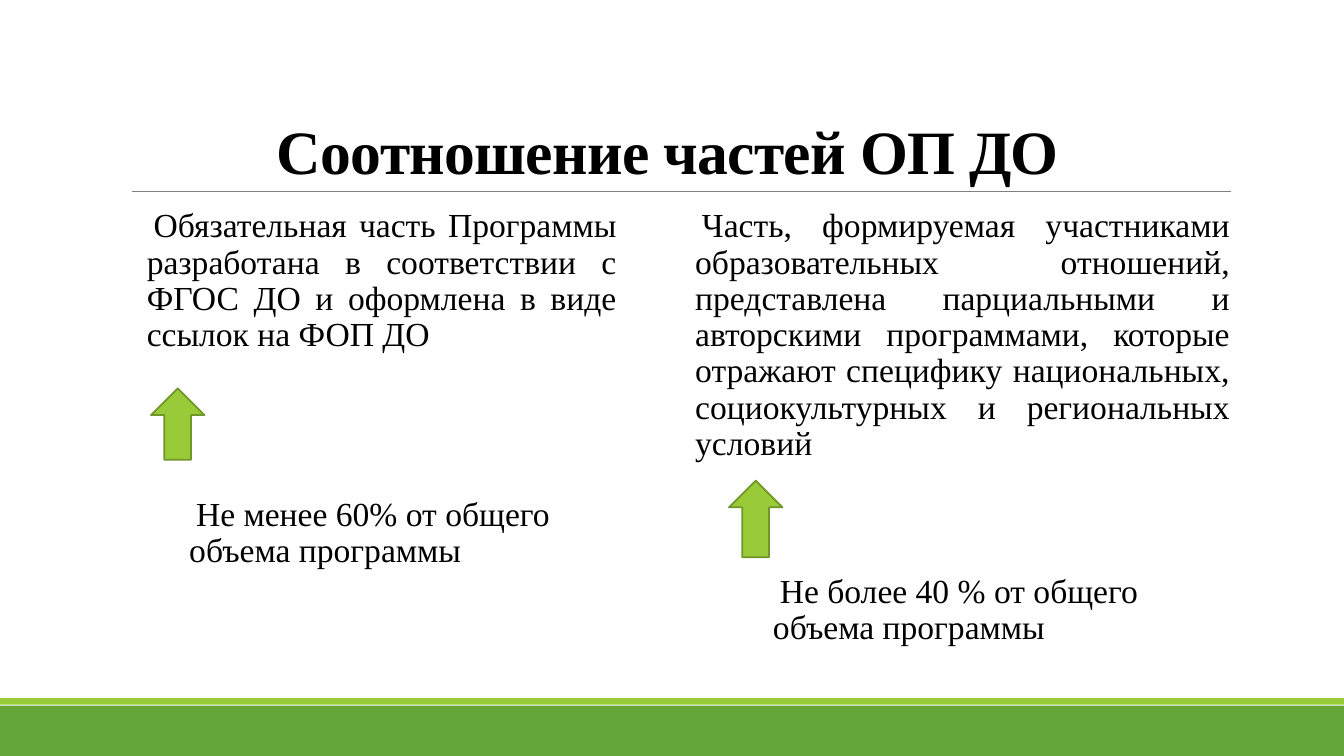
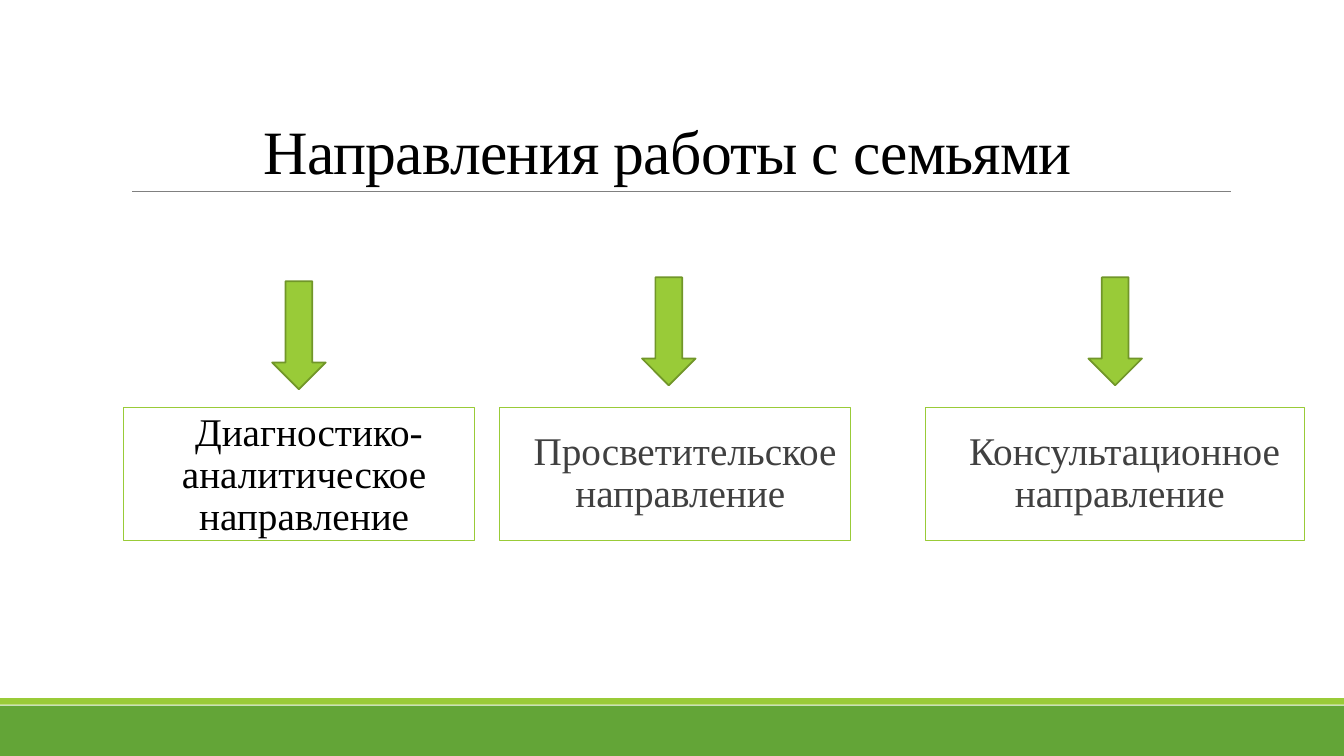
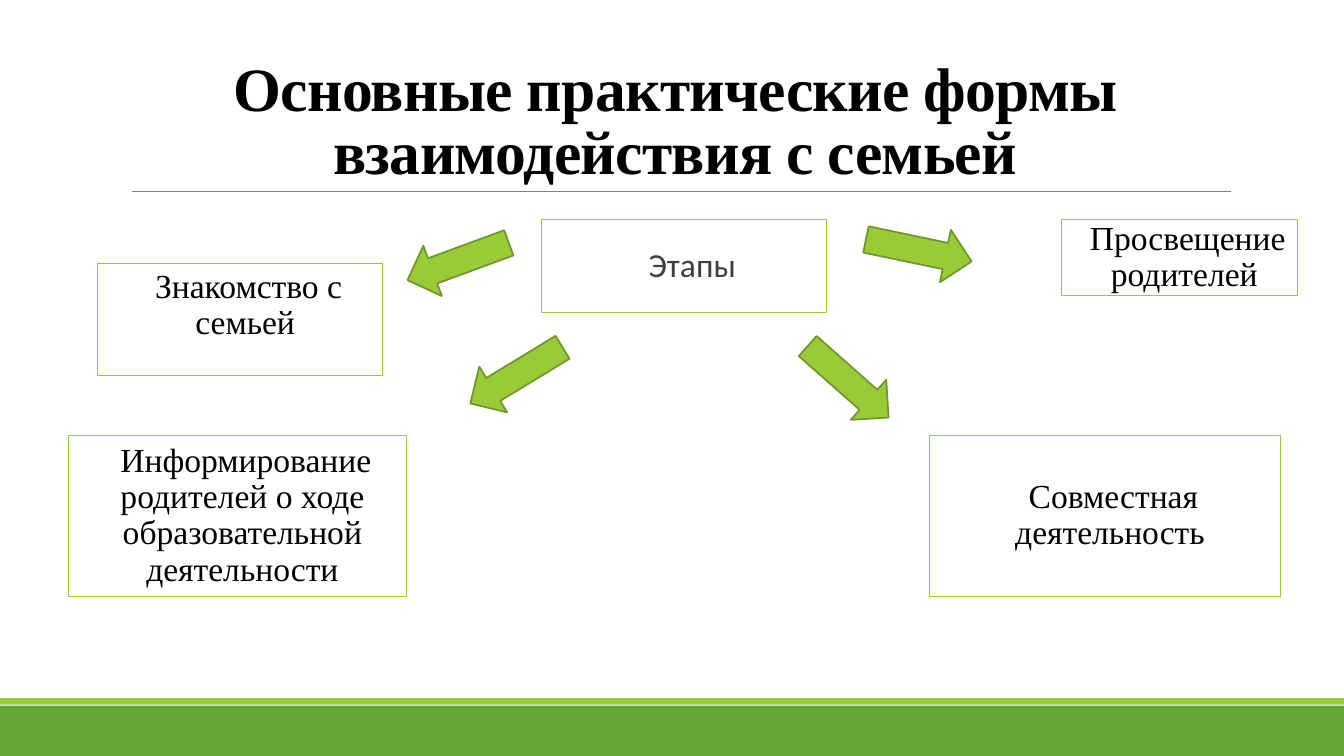
from dataclasses import dataclass

from lxml import etree
from pptx import Presentation
from pptx.dml.color import RGBColor
from pptx.enum.shapes import MSO_CONNECTOR, MSO_SHAPE
from pptx.enum.text import MSO_ANCHOR, PP_ALIGN
from pptx.oxml.ns import qn
from pptx.util import Cm, Pt

RECTANGLE = MSO_SHAPE.RECTANGLE
RIGHT_ARROW = MSO_SHAPE.RIGHT_ARROW
DOWN_ARROW = MSO_SHAPE.DOWN_ARROW
STRAIGHT = MSO_CONNECTOR.STRAIGHT
TOP, MIDDLE, BOTTOM = MSO_ANCHOR.TOP, MSO_ANCHOR.MIDDLE, MSO_ANCHOR.BOTTOM
LEFT, CENTER, JUSTIFY = PP_ALIGN.LEFT, PP_ALIGN.CENTER, PP_ALIGN.JUSTIFY


@dataclass(frozen=True)
class Theme:
    band: str = "63A537"
    accent: str = "99CB38"
    arrow_line: str = "719629"
    rule: str = "808080"
    text: str = "000000"
    soft_text: str = "404040"
    font: str = "Times New Roman"
    plain_font: str = "Calibri"
    title_size: int = 44
    label_size: int = 28
    body_size: int = 24


THEME = Theme()
PAGE_WIDTH, PAGE_HEIGHT = 33.87, 19.05
ARROW_WIDTH, ARROW_LENGTH = 1.35, 2.72


def rgb(value):
    return RGBColor.from_string(value)


def lengths(*values):
    return [Cm(value) for value in values]


def add_filled(page, kind, at, fill, line=None):
    shape = page.shapes.add_shape(kind, *lengths(*at))
    shape.shadow.inherit = False
    shape.fill.solid()
    shape.fill.fore_color.rgb = rgb(fill)
    if line:
        shape.line.color.rgb = rgb(line)
        shape.line.width = Pt(1.25)
    else:
        shape.line.fill.background()
    return shape


def add_arrow(page, left, top, rotation=0, kind=DOWN_ARROW,
              size=(ARROW_WIDTH, ARROW_LENGTH)):
    arrow = add_filled(page, kind, (left, top, *size), THEME.accent, THEME.arrow_line)
    arrow.rotation = rotation


def write(box, text, size, align, anchor, color=THEME.text, font=THEME.font):
    frame = box.text_frame
    frame.word_wrap = True
    frame.vertical_anchor = anchor
    para = frame.paragraphs[0]
    para.text = text
    para.alignment = align
    span = para.runs[0]
    span.font.size = Pt(size)
    span.font.name = font
    span.font.color.rgb = rgb(color)
    return para


def write_body(box, text, size, align, anchor, **style):
    """Write a paragraph with the hanging indent and blank bullet of body text."""
    frame = box.text_frame
    frame.margin_left = frame.margin_right = 0
    frame.margin_top = frame.margin_bottom = Cm(0.13)
    para = write(box, text, size, align, anchor, **style)
    para.line_spacing = 0.9
    para.space_before = Pt(12)
    para.space_after = Pt(2)
    properties = para._p.get_or_add_pPr()
    properties.set("marL", str(Cm(0.25)))
    properties.set("indent", str(-Cm(0.25)))
    bullet_color = etree.SubElement(properties, qn("a:buClr"))
    etree.SubElement(bullet_color, qn("a:srgbClr"), val=THEME.accent)
    etree.SubElement(properties, qn("a:buChar"), char=" ")


def add_text(page, at, text, align=LEFT):
    box = page.shapes.add_textbox(*lengths(*at))
    write_body(box, text, THEME.body_size, align, TOP)


def add_framed(page, at, text, size=THEME.body_size, anchor=MIDDLE, **style):
    box = page.shapes.add_shape(RECTANGLE, *lengths(*at))
    box.shadow.inherit = False
    box.fill.background()
    box.line.color.rgb = rgb(THEME.accent)
    box.line.width = Pt(0.75)
    write_body(box, text, size, CENTER, anchor, **style)


def add_page(deck, title, bold=True):
    """Add a page with the green bands, the title and the rule below it."""
    page = deck.slides.add_slide(deck.slide_layouts[6])
    add_filled(page, RECTANGLE, (0, 17.78, PAGE_WIDTH, 1.27), THEME.band)
    add_filled(page, RECTANGLE, (0, 17.59, PAGE_WIDTH, 0.17), THEME.accent)

    rule = page.shapes.add_connector(STRAIGHT, *lengths(3.33, 4.82, 31.01, 4.82))
    rule.line.color.rgb = rgb(THEME.rule)
    rule.line.width = Pt(0.5)
    etree.SubElement(rule._element.spPr, qn("a:effectLst"))

    box = page.shapes.add_textbox(*lengths(3.05, 0.79, 27.94, 4.04))
    para = write(box, title, THEME.title_size, CENTER, BOTTOM)
    para.line_spacing = 0.85
    span = para.runs[0]
    span.font.bold = bold
    span._r.get_or_add_rPr().set("spc", "-50")
    return page


def build_proportions(deck):
    page = add_page(deck, "Соотношение частей ОП ДО ")
    add_text(page, (3.45, 5.13, 12.09, 4.65),
             "Обязательная часть Программы разработана в соответствии с ФГОС ДО "
             "и оформлена в виде ссылок на ФОП ДО", JUSTIFY)
    add_text(page, (17.27, 5.13, 13.72, 6.68),
             "Часть, формируемая участниками образовательных отношений, "
             "представлена парциальными и авторскими программами, которые "
             "отражают специфику национальных, социокультурных и региональных "
             "условий", JUSTIFY)
    for left, top, length in ((3.58, 10.01, 1.8), (18.08, 12.4, 1.93)):
        add_arrow(page, left, top, 270, RIGHT_ARROW, (length, ARROW_WIDTH))
    add_text(page, (4.52, 12.4, 10.59, 2.41), "Не менее 60% от общего объема программы")
    add_text(page, (19.23, 14.35, 10.59, 2.41), "Не более 40 % от общего объема программы")


def build_directions(deck):
    page = add_page(deck, "Направления работы с семьями ", bold=False)
    directions = (
        (3.12, 8.84, "Диагностико-аналитическое направление", TOP, THEME.text),
        (12.6, 8.84, "Просветительское направление", MIDDLE, THEME.soft_text),
        (23.32, 9.55, "Консультационное направление", MIDDLE, THEME.soft_text),
    )
    for left, width, text, anchor, color in directions:
        add_framed(page, (left, 10.26, width, 3.35), text, THEME.label_size,
                   anchor, color=color)
    for left, top in ((6.86, 7.09), (16.18, 6.99), (27.43, 6.99)):
        add_arrow(page, left, top)


def build_stages(deck):
    page = add_page(deck, "Основные практические формы взаимодействия с семьей")
    add_framed(page, (13.64, 5.54, 7.19, 2.34), "Этапы",
               color=THEME.soft_text, font=THEME.plain_font)
    stages = (
        ((2.46, 6.65, 7.19, 2.82), "Знакомство с семьей", TOP),
        ((1.73, 10.97, 8.51, 4.06),
         "Информирование родителей о ходе образовательной деятельности", MIDDLE),
        ((26.75, 5.54, 5.94, 1.91), "Просвещение родителей", MIDDLE),
        ((23.42, 10.97, 8.86, 4.06), "Совместная деятельность", MIDDLE),
    )
    for at, text, anchor in stages:
        add_framed(page, at, text, anchor=anchor)
    for left, top, rotation in ((10.87, 5.23, 69.8), (12.34, 8.1, 58.7),
                                (22.48, 4.95, 281.8), (20.7, 8.26, 311.5)):
        add_arrow(page, left, top, rotation)


def main():
    deck = Presentation()
    deck.slide_width, deck.slide_height = lengths(PAGE_WIDTH, PAGE_HEIGHT)
    build_proportions(deck)
    build_directions(deck)
    build_stages(deck)
    deck.save("out.pptx")


if __name__ == "__main__":
    main()
